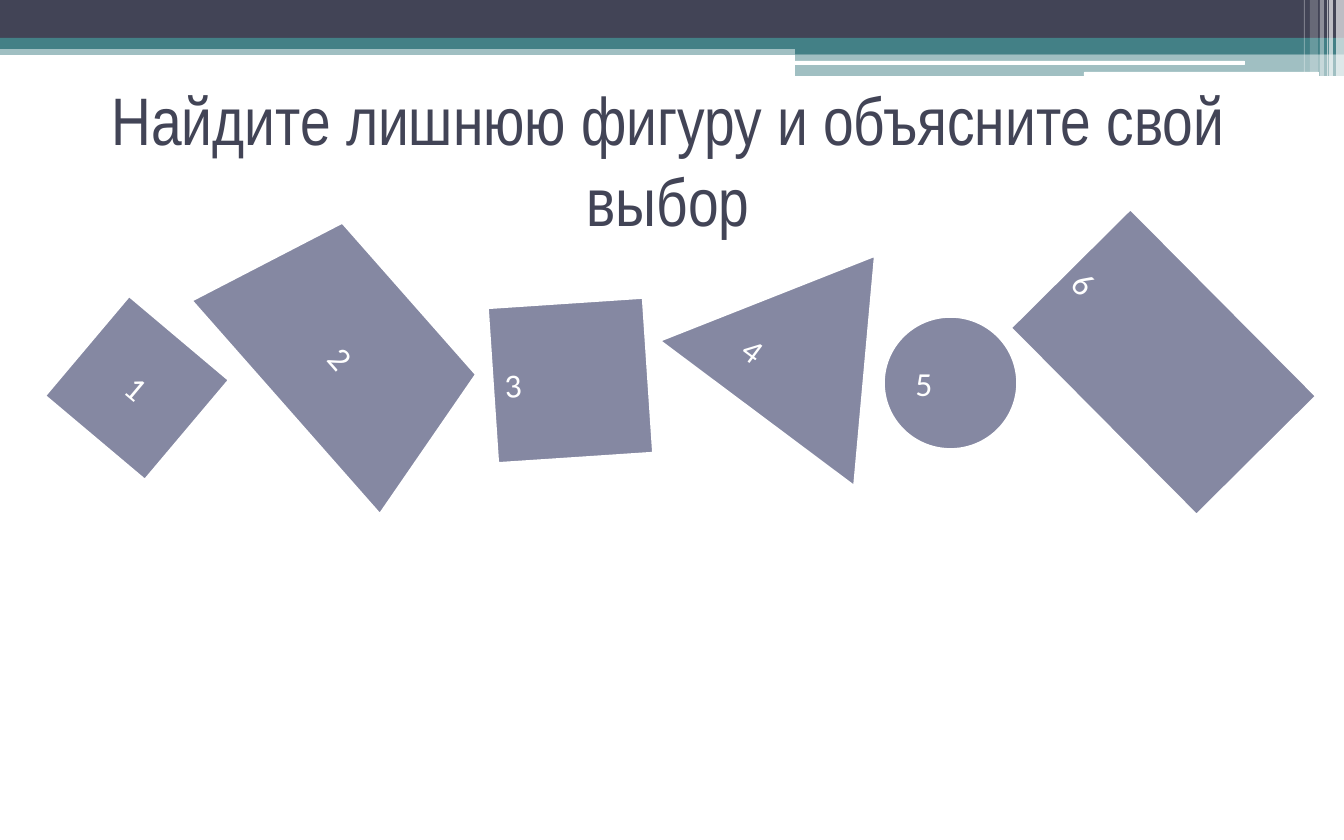
from lxml.etree import SubElement
from pptx import Presentation
from pptx.dml.color import RGBColor
from pptx.enum.shapes import MSO_SHAPE
from pptx.enum.text import MSO_ANCHOR, MSO_AUTO_SIZE, PP_ALIGN
from pptx.oxml.ns import qn
from pptx.util import Emu, Pt

EMU_PER_PX = 914400 / 134.4
WIDTH, HEIGHT = 1344, 840
NAVY, TEAL, LAVENDER, WHITE = "424456", "438086", "8588A2", "FFFFFF"


def px(length):
    return Emu(round(length * EMU_PER_PX))


def color(hex_string):
    return RGBColor.from_string(hex_string)


def add_filled(slide, kind, box, fill, opacity=100):
    shape = slide.shapes.add_shape(kind, *map(px, box))
    shape.shadow.inherit = False
    shape.fill.solid()
    shape.fill.fore_color.rgb = color(fill)
    shape.line.fill.background()
    if opacity < 100:
        rgb = shape.element.spPr.find(qn("a:solidFill")).find(qn("a:srgbClr"))
        SubElement(rgb, qn("a:alpha"), val=str(opacity * 1000))
    return shape


def write_text(shape, text, font, size, fill, align=PP_ALIGN.CENTER, wrap=True):
    frame = shape.text_frame
    frame.word_wrap = wrap
    frame.auto_size = MSO_AUTO_SIZE.NONE
    frame.vertical_anchor = MSO_ANCHOR.MIDDLE
    paragraph = frame.paragraphs[0]
    paragraph.alignment = align
    run = paragraph.add_run()
    run.text = text
    run.font.name = font
    run.font.size = Pt(size)
    run.font.color.rgb = color(fill)


def add_header(slide, left, top, width):
    bars = [
        (0, 44, width, 11, TEAL, 50),
        (0, 0, width, 38, NAVY, 100),
        (0, 38, width, 11, TEAL, 100),
        (795, 44, width - 795, 10, TEAL, 100),
        (795, 54, width - 795, 22, TEAL, 50),
    ]
    for x, y, bar_width, height, fill, opacity in bars:
        box = (left + x, top + y, bar_width, height)
        add_filled(slide, MSO_SHAPE.RECTANGLE, box, fill, opacity)
    for x, y, slit_width in [(795, 61, 450), (1084, 72, 235)]:
        box = (left + x, top + y, slit_width, 4)
        add_filled(slide, MSO_SHAPE.ROUNDED_RECTANGLE, box, WHITE)
    stripes = [
        (1336, 8, 76, 65),
        (1329, 4, 76, 65),
        (1327, 1, 76, 60),
        (1320, 4, 76, 40),
        (1310, 8, 72, 20),
        (1304, 1, 72, 30),
    ]
    for x, stripe_width, height, opacity in stripes:
        box = (left + x, top, stripe_width, height)
        add_filled(slide, MSO_SHAPE.RECTANGLE, box, WHITE, opacity)


def add_title(slide, left, top, width, height):
    title = slide.shapes.title
    title.left, title.top, title.width, title.height = map(px, (left, top, width, height))
    write_text(title, "Найдите лишнюю фигуру и объясните свой выбор",
               font="Arial Narrow", size=36, fill=NAVY)


def add_figures(slide, left, top):
    """Place the six numbered figures, each turned by its own angle."""
    centered = {"align": PP_ALIGN.CENTER, "wrap": True}
    at_left = {"align": PP_ALIGN.LEFT, "wrap": False}
    figures = [
        ("3", MSO_SHAPE.RECTANGLE, (421, 68, 159, 159), 356.2, at_left),
        ("6", MSO_SHAPE.RECTANGLE, (960, 43, 267, 172), 45.2, at_left),
        ("4", MSO_SHAPE.ISOSCELES_TRIANGLE, (622, 0, 249, 202), 36.8, at_left),
        ("5", MSO_SHAPE.OVAL, (812, 82, 137, 136), 0, at_left),
        ("2", MSO_SHAPE.TRAPEZOID, (133, 36, 289, 168), 48.6, centered),
        ("1", MSO_SHAPE.RECTANGLE, (0, 88, 134, 134), 40.1, centered),
    ]
    for number, kind, (x, y, width, height), angle, layout in figures:
        figure = add_filled(slide, kind, (left + x, top + y, width, height), LAVENDER)
        figure.rotation = angle
        figure.line.color.rgb = color(WHITE)
        figure.line.width = Pt(3)
        write_text(figure, number, font="Calibri", size=18, fill=WHITE, **layout)


def main():
    presentation = Presentation()
    presentation.slide_width, presentation.slide_height = px(WIDTH), px(HEIGHT)
    slide = presentation.slides.add_slide(presentation.slide_layouts[5])
    add_header(slide, 0, 0, WIDTH)
    add_figures(slide, 70, 233)
    add_title(slide, 63, 94, 1210, 130)
    presentation.save("out.pptx")


if __name__ == "__main__":
    main()
